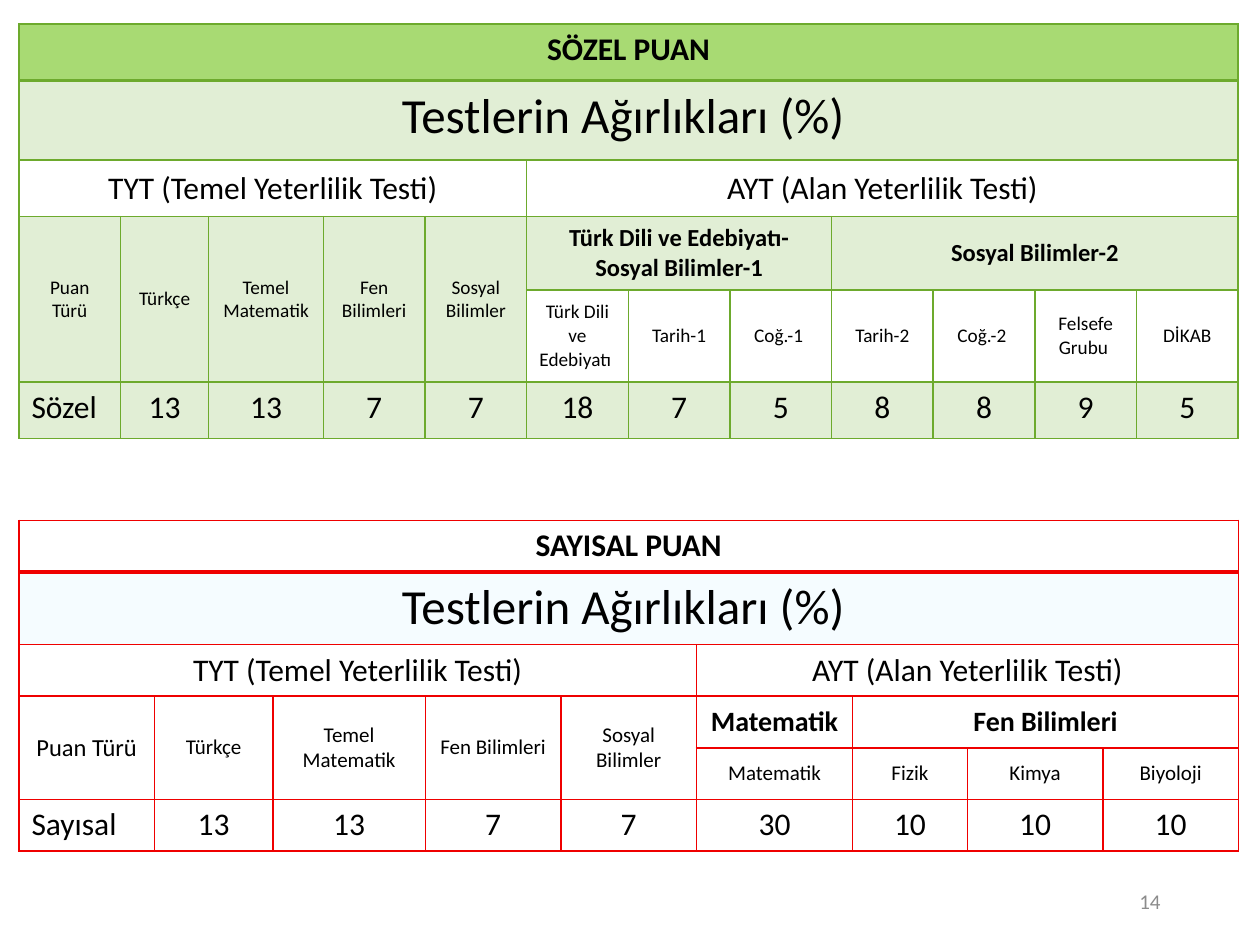
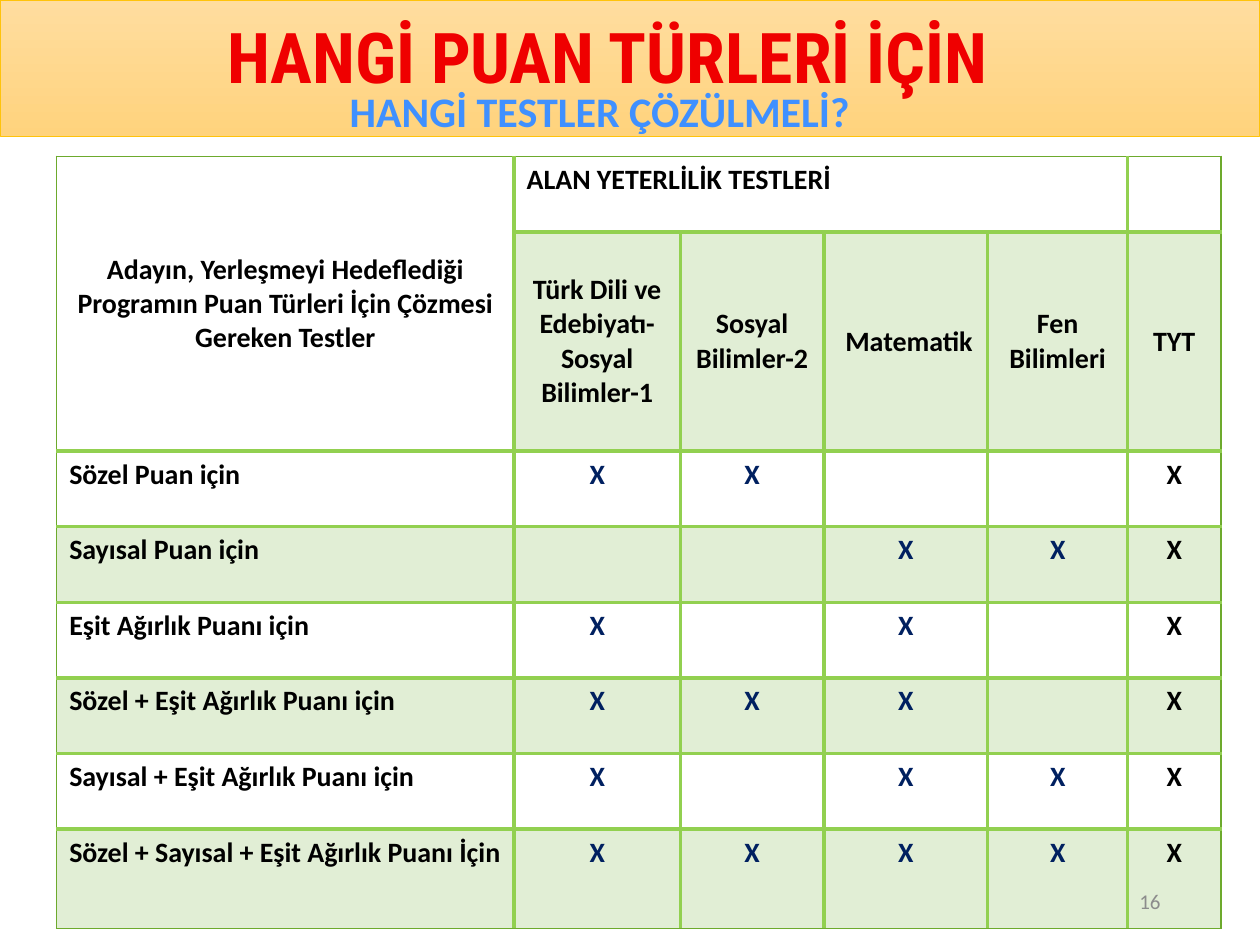
import pptx
import pptx.dml.color
import pptx.enum.shapes
import pptx.enum.text
import pptx.oxml
import pptx.oxml.ns
import pptx.util
from lxml import etree

inch = pptx.util.Inches
qn = pptx.oxml.ns.qn
LEFT = pptx.enum.text.PP_ALIGN.LEFT
CENTER = pptx.enum.text.PP_ALIGN.CENTER
RIGHT = pptx.enum.text.PP_ALIGN.RIGHT
TOP = pptx.enum.text.MSO_ANCHOR.TOP
MIDDLE = pptx.enum.text.MSO_ANCHOR.MIDDLE

# Shared colours
BLACK, WHITE, NAVY, GREY = "000000", "FFFFFF", "002060", "8C8C8C"
GREEN, LIME, HEADER_GREEN = "6DAA2D", "92D050", "A8DA73"
RED, PALE_BLUE, BRIGHT_BLUE = "EF0000", "CDF1FF", "3F90FF"
TINTS = (GREEN, PALE_BLUE)  # cell fills shown at 20 % opacity

# Text styles: alignment, anchor, colour, font format
STYLES = {
    "banner": (CENTER, TOP, BLACK, {"size": 18, "bold": True}),
    "heading": (CENTER, TOP, BLACK, {"size": 28, "bold": False}),
    "exam": (CENTER, MIDDLE, BLACK, {"size": 18, "bold": False}),
    "test 11": (CENTER, MIDDLE, BLACK, {"size": 11, "bold": False}),
    "test 12": (CENTER, MIDDLE, BLACK, {"size": 12, "bold": False}),
    "test 14": (CENTER, MIDDLE, BLACK, {"size": 14, "bold": False}),
    "group 14": (CENTER, MIDDLE, BLACK, {"size": 14, "bold": True}),
    "group 16": (CENTER, MIDDLE, BLACK, {"size": 16, "bold": True}),
    "score": (LEFT, TOP, BLACK, {"size": 18, "bold": False}),
    "weight": (CENTER, TOP, BLACK, {"size": 18, "bold": False}),
    "target": (LEFT, TOP, BLACK, {"size": 16, "bold": True}),
    "mark": (CENTER, TOP, NAVY, {"size": 16, "bold": True}),
    "TYT mark": (CENTER, TOP, BLACK, {"size": 16, "bold": True}),
    "title": (CENTER, TOP, RED, {"size": 40, "bold": True, "name": "Roboto Condensed"}),
    "subtitle": (CENTER, TOP, BRIGHT_BLUE, {"size": 24, "bold": True}),
    "page number": (RIGHT, MIDDLE, GREY, {"size": 12, "bold": False}),
}


def paint(fill, hex_colour):
    fill.solid()
    fill.fore_color.rgb = pptx.dml.color.RGBColor.from_string(hex_colour)


def write(holder, text, style):
    """Put text into a text frame or a table cell."""
    align, anchor, colour, font_format = STYLES[style]
    holder.vertical_anchor = anchor
    para = getattr(holder, "text_frame", holder).paragraphs[0]
    para.alignment = align
    if not text:
        return
    span = para.add_run()
    span.text = text
    for name, value in {"name": "Calibri", **font_format}.items():
        setattr(span.font, name, pptx.util.Pt(value) if name == "size" else value)
    paint(span.font.fill, colour)


deck = pptx.Presentation()
deck.slide_width, deck.slide_height = inch(10), inch(7.5)
weights_page = deck.slides.add_slide(deck.slide_layouts[6])
tests_page = deck.slides.add_slide(deck.slide_layouts[5])

# Title band of the second slide
band = tests_page.shapes.add_shape(
    pptx.enum.shapes.MSO_SHAPE.RECTANGLE, 0, 0, deck.slide_width, inch(1.08))
band.shadow.inherit = False
band.fill.gradient()
band.fill.gradient_angle = 270
for stop, colour in zip(band.fill.gradient_stops, ("FFDD9F", "FFD37D")):
    stop.color.rgb = pptx.dml.color.RGBColor.from_string(colour)
paint(band.line.fill, "FFC30B")
band.line.width = pptx.util.Pt(0.5)
tests_page.shapes.element.insert(2, band.element)

# Blocks of cells: row, first column, style, fill, row span, column spans, texts
EXAMS = ["TYT (Temel Yeterlilik Testi)", "AYT (Alan Yeterlilik Testi)"]
WEIGHTS = "Testlerin Ağırlıkları (%) "
TYT_TESTS = ["Türkçe", "Temel Matematik", "Fen Bilimleri", "Sosyal Bilimler"]

verbal_blocks = [
    (0, 0, "banner", HEADER_GREEN, 1, [12], ["SÖZEL PUAN"]),
    (1, 0, "heading", GREEN, 1, [12], [WEIGHTS]),
    (2, 0, "exam", None, 1, [5, 7], EXAMS),
    (3, 0, "test 11", GREEN, 2, [1] * 5, ["Puan Türü"] + TYT_TESTS),
    (3, 5, "group 14", GREEN, 1, [3, 4],
     ["Türk Dili ve Edebiyatı- Sosyal Bilimler-1", "Sosyal Bilimler-2"]),
    (4, 5, "test 11", None, 1, [1] * 7,
     ["Türk Dili ve Edebiyatı ", "Tarih-1", "Coğ.-1 ", "Tarih-2", "Coğ.-2 ",
      "Felsefe Grubu ", "DİKAB"]),
    (5, 0, "score", GREEN, 1, [1], ["Sözel"]),
    (5, 1, "weight", GREEN, 1, [1] * 11, "13 13 7 7 18 7 5 8 8 9 5".split()),
]

numeric_blocks = [
    (0, 0, "banner", WHITE, 1, [9], ["SAYISAL PUAN"]),
    (1, 0, "heading", PALE_BLUE, 1, [9], [WEIGHTS]),
    (2, 0, "exam", None, 1, [5, 4], EXAMS),
    (3, 0, "test 14", WHITE, 2, [1], ["Puan Türü"]),
    (3, 1, "test 12", WHITE, 2, [1] * 4, TYT_TESTS),
    (3, 5, "group 16", WHITE, 1, [1, 3], ["Matematik ", "Fen Bilimleri"]),
    (4, 5, "test 12", WHITE, 1, [1] * 4, ["Matematik", "Fizik", "Kimya", "Biyoloji"]),
    (5, 0, "score", WHITE, 1, [1], ["Sayısal"]),
    (5, 1, "weight", WHITE, 1, [1] * 8, "13 13 7 7 30 10 10 10".split()),
]

required_blocks = [
    (0, 0, "group 16", None, 2, [1],
     ["Adayın, Yerleşmeyi Hedeflediği Programın Puan Türleri İçin Çözmesi Gereken Testler"]),
    (0, 1, "target", None, 1, [4, 1], ["ALAN YETERLİLİK TESTLERİ", ""]),
    (1, 1, "group 16", GREEN, 1, [1] * 5,
     ["Türk Dili ve Edebiyatı- Sosyal Bilimler-1", "Sosyal Bilimler-2", " Matematik",
      "Fen Bilimleri", "TYT"]),
]
# One row per score target, with the field tests (columns 1 to 4) it needs
required_tests = [
    ("Sözel Puan için", {1, 2}),
    ("Sayısal Puan için", {3, 4}),
    ("Eşit Ağırlık Puanı için", {1, 3}),
    ("Sözel + Eşit Ağırlık Puanı için", {1, 2, 3}),
    ("Sayısal + Eşit Ağırlık Puanı için", {1, 3, 4}),
    ("Sözel + Sayısal + Eşit Ağırlık Puanı İçin", {1, 2, 3, 4}),
]
for row, (target, needed) in enumerate(required_tests, start=2):
    fill = GREEN if row % 2 else None
    marks = ["X" if column in needed else "" for column in range(1, 5)]
    required_blocks += [
        (row, 0, "target", fill, 1, [1], [target]),
        (row, 1, "mark", fill, 1, [1] * 4, marks),
        (row, 5, "TYT mark", fill, 1, [1], ["X"]),
    ]

# Tables: a column width of 0 takes an equal share of what is left; rules are (colour, points)
tables = [
    {"page": weights_page, "at": (0.15, 0.19), "width": 9.68,
     "columns": [0, 0.7, 0.91] + [0] * 9, "rows": [0.45, 0.63, 0.45, 0.58, 0.73, 0.45],
     "outer": (GREEN, 1), "inner": (GREEN, 1), "header": (GREEN, 2), "blocks": verbal_blocks},
    {"page": weights_page, "at": (0.15, 4.13), "width": 9.68,
     "columns": [0, 0.94, 1.21, 0, 0, 1.24, 0.91, 0, 0], "rows": [0.41, 0.57] + [0.41] * 4,
     "outer": (RED, 1), "inner": (RED, 1), "header": (RED, 2), "blocks": numeric_blocks},
    {"page": tests_page, "at": (0.45, 1.24), "width": 9.24,
     "columns": [3.63, 1.32, 1.14, 1.3, 1.11, 0.74], "rows": [0.6, 1.74] + [0.6] * 5 + [0.79],
     "outer": (GREEN, 1), "inner": (LIME, 2.25), "header": (LIME, 2.25),
     "blocks": required_blocks},
]

for plan in tables:
    columns, rows = plan["columns"], plan["rows"]
    left, top = plan["at"]
    frame = plan["page"].shapes.add_table(
        len(rows), len(columns), inch(left), inch(top), inch(plan["width"]), inch(sum(rows)))
    table = frame.table
    table.first_row = table.horz_banding = False
    share = (plan["width"] - sum(columns)) / max(columns.count(0), 1)
    for column, width in zip(table.columns, columns):
        column.width = inch(width or share)
    for row, height in zip(table.rows, rows):
        row.height = inch(height)

    # Merge, colour and write the cells
    for cell in table.iter_cells():
        cell.fill.background()
    for row, column, style, fill, row_span, column_spans, texts in plan["blocks"]:
        for column_span, text in zip(column_spans, texts):
            cell = table.cell(row, column)
            if row_span * column_span > 1:
                cell.merge(table.cell(row + row_span - 1, column + column_span - 1))
            if fill:
                paint(cell.fill, fill)
            write(cell, text, style)
            column += column_span

    # Cell borders and tint opacity
    for index, properties in enumerate(frame.element.iter(qn("a:tcPr"))):
        row, column = divmod(index, len(columns))
        outer, inner, header = plan["outer"], plan["inner"], plan["header"]
        sides = {
            "L": outer if column == 0 else inner,
            "R": outer if column == len(columns) - 1 else inner,
            "T": outer if row == 0 else header if row == 1 else inner,
            "B": outer if row == len(rows) - 1 else header if row == 0 else inner,
        }
        for tint in properties.iter(qn("a:srgbClr")):
            if tint.get("val") in TINTS:
                etree.SubElement(tint, qn("a:alpha"), val="20000")
        for place, (side, (colour, points)) in enumerate(sides.items()):
            line = etree.Element(qn("a:ln" + side), w=str(pptx.util.Pt(points)))
            solid = etree.SubElement(line, qn("a:solidFill"))
            etree.SubElement(solid, qn("a:srgbClr"), val=colour)
            properties.insert(place, line)

# Title, subtitle and page numbers
labels = [
    (tests_page, "title", (-0.18, 0.06, 10, 1.18), "HANGİ PUAN TÜRLERİ İÇİN"),
    (tests_page, "subtitle", (0.27, 0.63, 8.98, 0.5), "HANGİ TESTLER ÇÖZÜLMELİ?"),
    (weights_page, "page number", (7.06, 6.95, 2.25, 0.4), "14"),
    (tests_page, "page number", (7.06, 6.95, 2.25, 0.4), "16"),
]
for page, style, place, text in labels:
    box = page.shapes.title if style == "title" else page.shapes.add_textbox(0, 0, 0, 0)
    for name, value in zip(("left", "top", "width", "height"), place):
        setattr(box, name, inch(value))
    box.text_frame.word_wrap = True
    box.text_frame.auto_size = pptx.enum.text.MSO_AUTO_SIZE.NONE
    write(box.text_frame, text, style)

deck.save("out.pptx")
